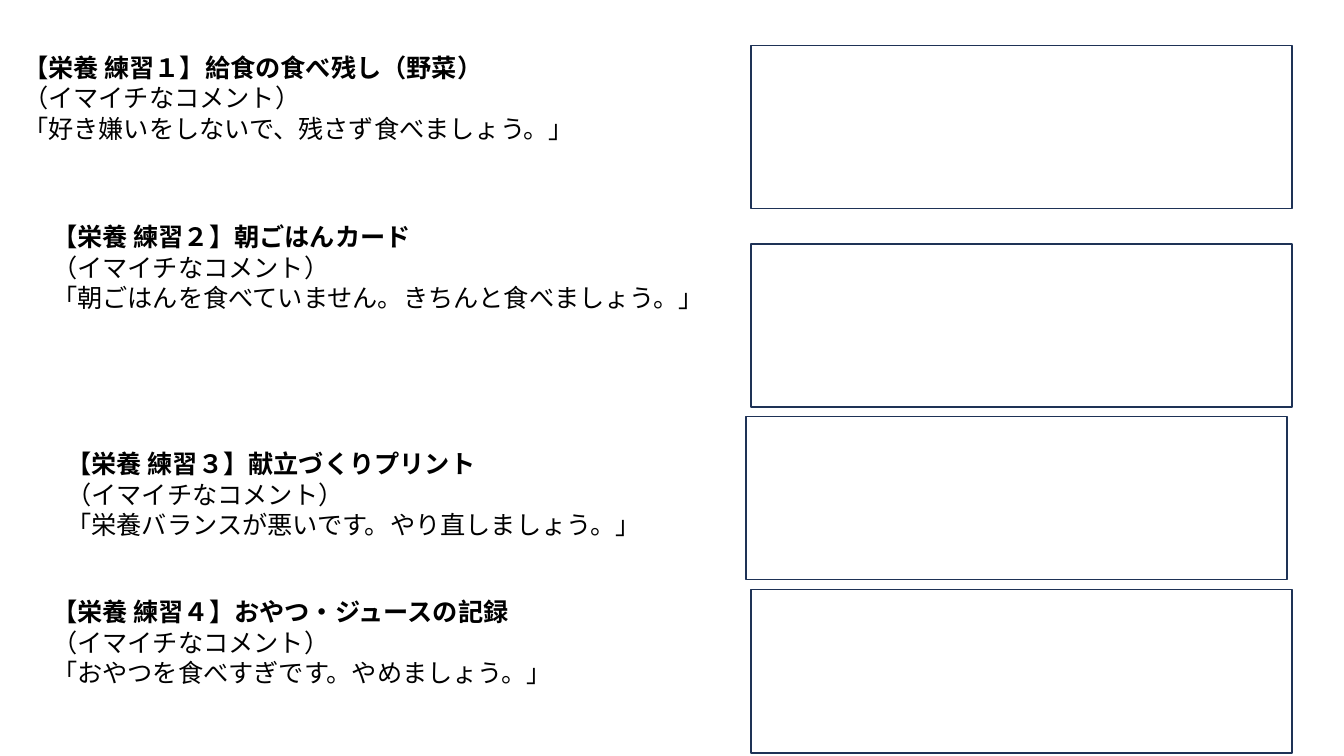
from dataclasses import dataclass

from lxml import etree
from pptx import Presentation
from pptx.dml.color import RGBColor
from pptx.enum.shapes import MSO_SHAPE
from pptx.enum.text import MSO_ANCHOR, PP_ALIGN
from pptx.oxml.ns import qn
from pptx.slide import Slide
from pptx.text.text import TextFrame
from pptx.util import Pt

RECTANGLE = MSO_SHAPE.RECTANGLE
LEFT = PP_ALIGN.LEFT
TOP = MSO_ANCHOR.TOP

WHITE = RGBColor(0xFF, 0xFF, 0xFF)
BLACK = RGBColor(0x00, 0x00, 0x00)
NAVY = RGBColor(0x1E, 0x32, 0x56)

FONT = "Noto Sans CJK JP"
BLANK_LAYOUT = 6
ANSWER_WIDTH, ANSWER_HEIGHT = 386.6, 116.6
EXERCISE_WIDTH = 480.2


@dataclass(frozen=True)
class Exercise:
    heading: str
    comment: str
    left: float
    top: float
    height: float
    answer_left: float
    answer_top: float


EXERCISES = [
    Exercise("【栄養 練習１】給食の食べ残し（野菜）",
             "「好き嫌いをしないで、残さず食べましょう。」",
             9.4, 32.4, 72.7, 536.4, 32.4),
    Exercise("【栄養 練習２】朝ごはんカード",
             "「朝ごはんを食べていません。きちんと食べましょう。」",
             30.2, 153.4, 94.3, 536.4, 174.2),
    Exercise("【栄養 練習３】献立づくりプリント",
             "「栄養バランスが悪いです。やり直しましょう。」",
             40.3, 315.4, 72.7, 532.8, 297.4),
    Exercise("【栄養 練習４】おやつ・ジュースの記録",
             "「おやつを食べすぎです。やめましょう。」",
             30.2, 421.2, 72.7, 536.4, 421.2),
]


def write_line(frame: TextFrame, text: str, *, first: bool = False,
               bold: bool = False, size: float = 18,
               color: RGBColor = BLACK) -> None:
    paragraph = frame.paragraphs[0] if first else frame.add_paragraph()
    paragraph.alignment = LEFT
    paragraph.line_spacing = Pt(21.6)
    run = paragraph.add_run()
    run.text = text
    run.font.name = FONT
    run.font.size = Pt(size)
    run.font.bold = bold
    run.font.color.rgb = color
    east_asian = etree.SubElement(run.font._element, qn("a:ea"))
    east_asian.set("typeface", FONT)


def add_answer_box(slide: Slide, exercise: Exercise) -> None:
    shape = slide.shapes.add_shape(
        RECTANGLE, Pt(exercise.answer_left), Pt(exercise.answer_top),
        Pt(ANSWER_WIDTH), Pt(ANSWER_HEIGHT))
    shape.shadow.inherit = False
    shape.fill.solid()
    shape.fill.fore_color.rgb = WHITE
    shape.line.color.rgb = NAVY
    shape.line.width = Pt(1)


def add_exercise_text(slide: Slide, exercise: Exercise) -> None:
    box = slide.shapes.add_textbox(
        Pt(exercise.left), Pt(exercise.top),
        Pt(EXERCISE_WIDTH), Pt(exercise.height))
    frame = box.text_frame
    frame.word_wrap = True
    frame.vertical_anchor = TOP
    frame.margin_top = Pt(5)
    write_line(frame, exercise.heading, first=True, bold=True)
    write_line(frame, "（イマイチなコメント）")
    write_line(frame, exercise.comment)


def main() -> None:
    presentation = Presentation()
    presentation.slide_width = Pt(960)
    presentation.slide_height = Pt(540)
    slide = presentation.slides.add_slide(
        presentation.slide_layouts[BLANK_LAYOUT])
    for exercise in EXERCISES:
        add_answer_box(slide, exercise)
        add_exercise_text(slide, exercise)
    presentation.save("out.pptx")


if __name__ == "__main__":
    main()
